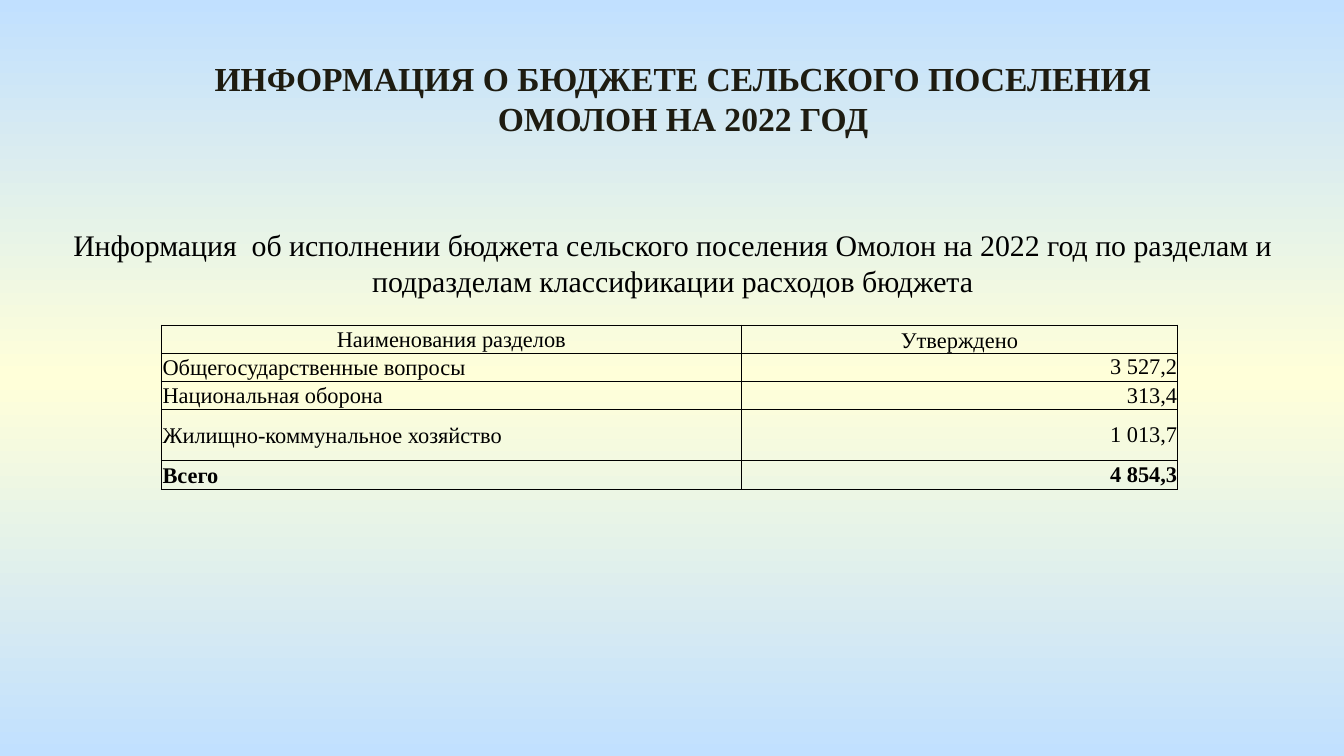
import copy
import pptx
import pptx.dml.color
import pptx.enum.text
import pptx.oxml
import pptx.oxml.ns
import pptx.util

Pt = pptx.util.Pt
ALIGN = pptx.enum.text.PP_ALIGN
ANCHOR = pptx.enum.text.MSO_ANCHOR
COLORS = {"sky": "C1E0FF", "cream": "FFFFD9", "title": "1E1C11", "ink": "000000"}
FONT = "Times New Roman"
ROWS = [
    ("Наименования разделов", "Утверждено"),
    ("Общегосударственные вопросы", "3 527,2"),
    ("Национальная оборона", "313,4"),
    ("Жилищно-коммунальное хозяйство", "1 013,7"),
    ("Всего", "4 854,3"),
]


def color(name):
    return pptx.dml.color.RGBColor.from_string(COLORS[name])


def write(frame, text, size=12, ink="ink", bold=False, align=ALIGN.LEFT):
    frame.word_wrap = True
    para = frame.paragraphs[0]
    para.alignment = align
    run = para.add_run()
    run.text = text
    run.font.name = FONT
    run.font.size = Pt(size)
    run.font.bold = bold
    run.font.color.rgb = color(ink)


class Deck:
    def __init__(self):
        self.file = pptx.Presentation()
        self.file.slide_width, self.file.slide_height = Pt(720), Pt(405)
        self.slide = self.file.slides.add_slide(self.file.slide_layouts[5])

    def backdrop(self, edge, middle):
        fill = self.slide.background.fill
        fill.gradient()
        fill.gradient_angle = 90
        first, last = fill.gradient_stops
        for stop, spot in ((first, 0), (last, 1)):
            stop.color.rgb = color(edge)
            stop.position = spot
        node = self.slide.background._cSld.find(".//" + pptx.oxml.ns.qn("a:gsLst"))
        node.insert(1, copy.deepcopy(node[0]))
        center = fill.gradient_stops[1]
        center.position = 0.5
        center.color.rgb = color(middle)

    def title(self, text, left, top, width, height):
        shape = self.slide.shapes.title
        shape.left, shape.top = Pt(left), Pt(top)
        shape.width, shape.height = Pt(width), Pt(height)
        frame = shape.text_frame
        frame.auto_size = pptx.enum.text.MSO_AUTO_SIZE.NONE
        frame.vertical_anchor = ANCHOR.MIDDLE
        write(frame, text, size=18, ink="title", bold=True, align=ALIGN.CENTER)

    def label(self, text, left, top, width, height):
        box = self.slide.shapes.add_textbox(Pt(left), Pt(top), Pt(width), Pt(height))
        write(box.text_frame, text, size=16, align=ALIGN.CENTER)

    def border(self, cell):
        props = cell._tc.get_or_add_tcPr()
        for spot, side in enumerate("LRTB"):
            line = pptx.oxml.parse_xml(
                f'<a:ln{side} {pptx.oxml.ns.nsdecls("a")} w="{Pt(0.5)}">'
                f'<a:solidFill><a:srgbClr val="{COLORS["ink"]}"/></a:solidFill>'
                f'</a:ln{side}>')
            props.insert(spot, line)

    def table(self, rows, left, top, widths, heights):
        grid = self.slide.shapes.add_table(
            len(rows), len(widths), Pt(left), Pt(top),
            Pt(sum(widths)), Pt(sum(heights))).table
        grid.first_row = grid.horz_banding = False
        for column, width in zip(grid.columns, widths):
            column.width = Pt(width)
        for row, height in zip(grid.rows, heights):
            row.height = Pt(height)
        for r, texts in enumerate(rows):
            for c, text in enumerate(texts):
                cell = grid.cell(r, c)
                inset = Pt(0 if r and c else 0.7)
                cell.margin_left = cell.margin_right = cell.margin_top = inset
                cell.margin_bottom = 0
                cell.vertical_anchor = ANCHOR.BOTTOM if c and not r else ANCHOR.MIDDLE
                cell.fill.background()
                self.border(cell)
                side = ALIGN.RIGHT if c else ALIGN.LEFT
                write(cell.text_frame, text, bold=r == len(rows) - 1,
                      align=side if r else ALIGN.CENTER)


def main():
    deck = Deck()
    deck.backdrop("sky", "cream")
    deck.title("ИНФОРМАЦИЯ О БЮДЖЕТЕ СЕЛЬСКОГО ПОСЕЛЕНИЯ ОМОЛОН НА 2022 ГОД",
               88, 27, 556, 51)
    deck.label("Информация  об исполнении бюджета сельского поселения Омолон "
               "на 2022 год по разделам и подразделам классификации расходов бюджета",
               0.5, 118, 720, 46)
    low, high = 14.6, 27.4
    deck.table(ROWS, 86.4, 174.2, [311, 233.3], [low, low, low, high, low])
    deck.file.save("out.pptx")


if __name__ == "__main__":
    main()
